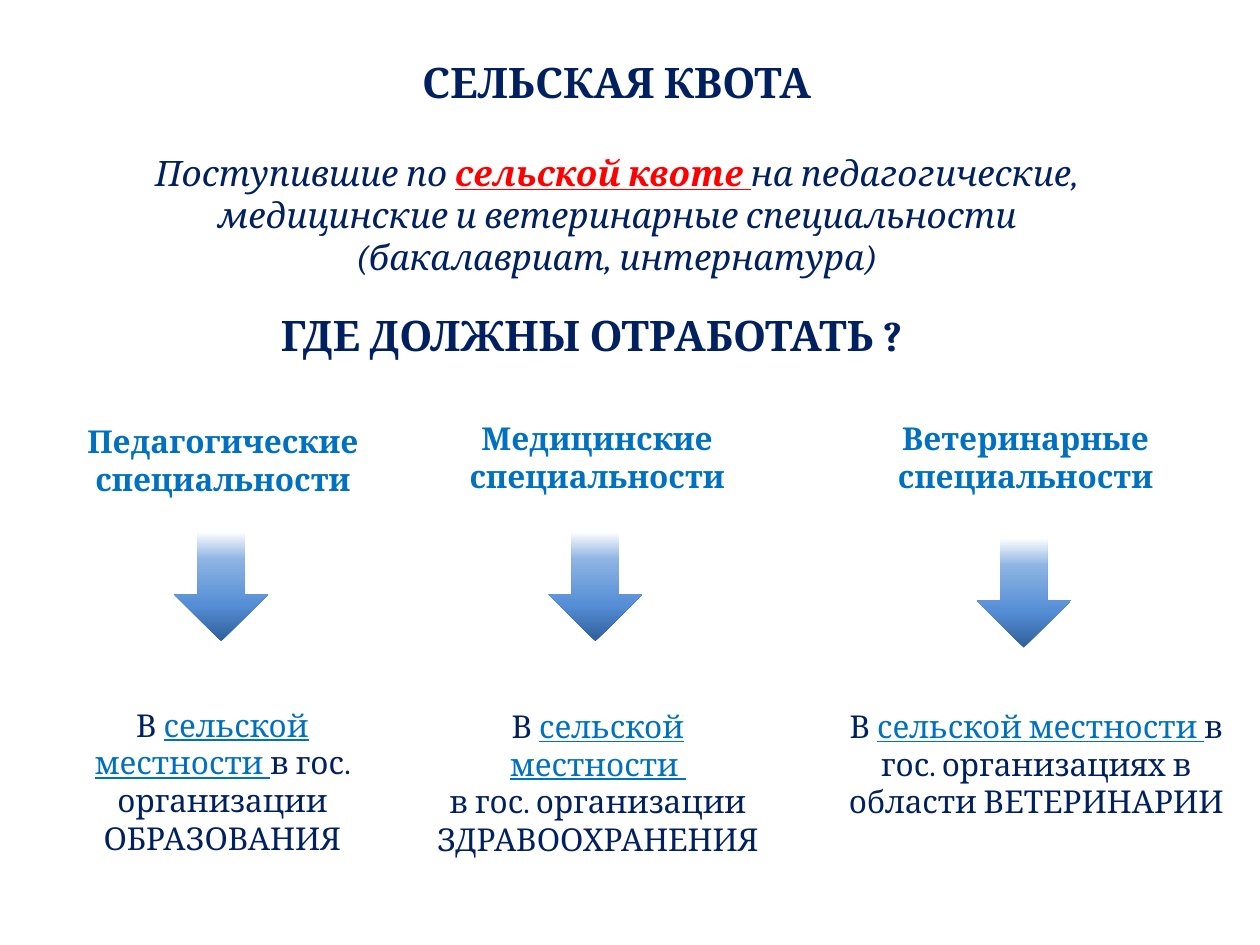
import lxml.etree
import pptx
import pptx.dml.color
import pptx.enum.shapes
import pptx.enum.text
import pptx.oxml
import pptx.oxml.ns
import pptx.util

Pt = pptx.util.Pt
ALIGN = pptx.enum.text.PP_ALIGN
ANCHOR = pptx.enum.text.MSO_ANCHOR
FONT = "Cambria"
COLORS = {"navy": "002060", "blue": "0070C0", "red": "FF0000"}
ARROW_STOPS = [(0, "2F5F99"), (33, "558ED5"), (75, "8EB4E3"), (100, "FFFFFF")]
ARROW_SIZE = (54, 62.64)

# A run is (text, colour, styles): b bold, i italic, u underlined.
TITLE = [("СЕЛЬСКАЯ КВОТА", "navy", "b")]
INTRO = [
    ("Поступившие по ", "navy", "i"),
    ("сельской квоте ", "red", "biu"),
    ("на педагогические, медицинские и ветеринарные специальности "
     "(бакалавриат, интернатура)", "navy", "i"),
]
QUESTION = [("ГДЕ ДОЛЖНЫ ОТРАБОТАТЬ ?", "navy", "b")]

# Boxes are left, top, width, height; arrows are left, top.
SPECIALTIES = [
    {"field": "Педагогические", "field_box": (36.72, 237.6, 181.44, 51.12),
     "arrow": (99.36, 303.84),
     "place": "сельской местности ", "work": "в гос. организации ОБРАЗОВАНИЯ",
     "work_box": (25.2, 399.6, 203.76, 72.72)},
    {"field": "Медицинские", "field_box": (250.56, 236.16, 181.44, 51.12),
     "arrow": (313.2, 303.84),
     "place": "сельской местности \n", "work": "в гос. организации ЗДРАВООХРАНЕНИЯ",
     "work_box": (236.88, 400.32, 209.52, 72.72)},
    {"field": "Ветеринарные", "field_box": (495.36, 236.16, 181.44, 51.12),
     "arrow": (558, 307.44),
     "place": "сельской местности ", "work": "в гос. организациях в области ВЕТЕРИНАРИИ",
     "work_box": (470.16, 400.32, 244.08, 72.72)},
]


def add_text(slide, box, runs, size, align=ALIGN.CENTER, anchor=ANCHOR.TOP, wrap=True):
    frame = slide.shapes.add_textbox(*map(Pt, box)).text_frame
    frame.word_wrap = wrap
    frame.auto_size = pptx.enum.text.MSO_AUTO_SIZE.SHAPE_TO_FIT_TEXT
    frame.vertical_anchor = anchor
    paragraph = frame.paragraphs[0]
    paragraph.alignment = align
    for text, color, styles in runs:
        run = paragraph.add_run()
        run.text = text.rstrip("\n")
        run.font.name = FONT
        run.font.size = Pt(size)
        run.font.bold = "b" in styles
        run.font.italic = "i" in styles
        run.font.underline = "u" in styles
        run.font.color.rgb = pptx.dml.color.RGBColor.from_string(COLORS[color])
        if text.endswith("\n"):
            paragraph.add_line_break()


def add_arrow(slide, corner):
    """Down arrow that fades from dark at the tip to white at the top."""
    arrow = slide.shapes.add_shape(
        pptx.enum.shapes.MSO_SHAPE.DOWN_ARROW, *map(Pt, corner + ARROW_SIZE))
    arrow.shadow.inherit = False
    arrow.line.fill.background()
    arrow.fill.gradient()
    arrow.fill.gradient_angle = 90
    stops = arrow._element.spPr.find(".//" + pptx.oxml.ns.qn("a:gsLst"))
    for old_stop in list(stops):
        stops.remove(old_stop)
    for percent, color in ARROW_STOPS:
        stop = lxml.etree.SubElement(
            stops, pptx.oxml.ns.qn("a:gs"), pos=str(percent * 1000))
        lxml.etree.SubElement(stop, pptx.oxml.ns.qn("a:srgbClr"), val=color)


def main():
    deck = pptx.Presentation()
    deck.slide_width, deck.slide_height = Pt(720), Pt(540)
    slide = deck.slides.add_slide(deck.slide_layouts[6])

    add_text(slide, (213.12, 28.8, 278.64, 36), TITLE, 24, anchor=ANCHOR.MIDDLE)
    add_text(slide, (48.96, 82.8, 606.96, 55.44), INTRO, 20)
    add_text(slide, (153.36, 173.52, 396.72, 36), QUESTION, 24,
             align=ALIGN.LEFT, wrap=False)

    for specialty in SPECIALTIES:
        add_text(slide, specialty["field_box"],
                 [(specialty["field"] + " специальности", "blue", "b")], 18)
        add_arrow(slide, specialty["arrow"])
        add_text(slide, specialty["work_box"],
                 [("В ", "navy", ""), (specialty["place"], "blue", "u"),
                  (specialty["work"], "navy", "")], 18)

    deck.save("out.pptx")


if __name__ == "__main__":
    main()
